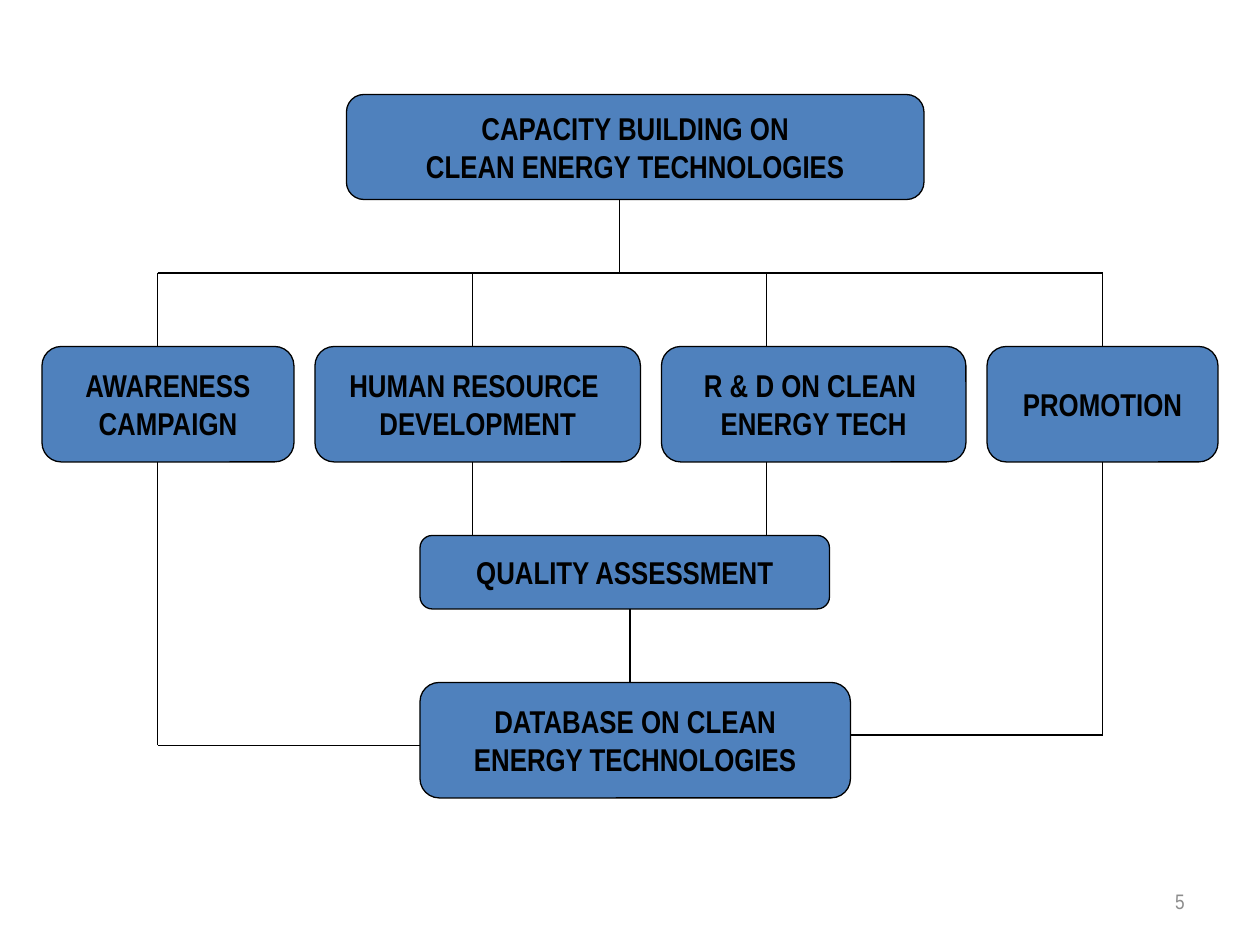
from pptx import Presentation
from pptx.dml.color import RGBColor
from pptx.enum.shapes import MSO_CONNECTOR, MSO_SHAPE
from pptx.enum.text import MSO_ANCHOR, PP_ALIGN
from pptx.oxml.ns import qn
from pptx.util import Pt
from lxml import etree

ROUNDED = MSO_SHAPE.ROUNDED_RECTANGLE
STRAIGHT = MSO_CONNECTOR.STRAIGHT
MIDDLE = MSO_ANCHOR.MIDDLE
CENTER, RIGHT = PP_ALIGN.CENTER, PP_ALIGN.RIGHT
TOP, BOTTOM = 0, 2
COLORS = {"box": "4F81BD", "ink": "000000", "number": "8C8C8C"}


class Chart:
    """Draws boxes, lines and text on one slide in a shared style."""

    font = "Arial Narrow"
    line_width = 0.75

    def __init__(self, slide):
        self.s = slide

    def color(self, name):
        return RGBColor.from_string(COLORS[name])

    def stroke(self, line):
        line.color.rgb = self.color("ink")
        line.width = Pt(self.line_width)

    def add_text(self, tf, lines, size, color, align, bold=False):
        tf.vertical_anchor = MIDDLE
        for i, text in enumerate(lines):
            p = tf.add_paragraph() if i else tf.paragraphs[0]
            p.alignment = align
            r = p.add_run()
            r.text = text
            r.font.name = self.font
            r.font.size = Pt(size)
            r.font.bold = bold
            r.font.color.rgb = self.color(color)

    def box(self, x, y, w, h, *lines):
        sp = self.s.shapes.add_shape(ROUNDED, Pt(x), Pt(y), Pt(w), Pt(h))
        sp.shadow.inherit = False
        sp.fill.solid()
        sp.fill.fore_color.rgb = self.color("box")
        self.stroke(sp.line)
        sp.text_frame.word_wrap = False
        self.add_text(sp.text_frame, lines, 18, "ink", CENTER, bold=True)
        return sp

    def line(self, x1, y1, x2, y2, begin=None, end=None):
        cx = self.s.shapes.add_connector(STRAIGHT, Pt(x1), Pt(y1), Pt(x2), Pt(y2))
        self.stroke(cx.line)
        etree.SubElement(cx._element.spPr, qn("a:effectLst"))
        if begin:
            cx.begin_connect(*begin)
        if end:
            cx.end_connect(*end)

    def label(self, x, y, w, h, text):
        sp = self.s.shapes.add_textbox(Pt(x), Pt(y), Pt(w), Pt(h))
        sp.text_frame.word_wrap = True
        self.add_text(sp.text_frame, [text], 12, "number", RIGHT)


def main():
    prs = Presentation()
    prs.slide_width, prs.slide_height = Pt(720), Pt(540)
    chart = Chart(prs.slides.add_slide(prs.slide_layouts[6]))

    chart.label(516, 500.5, 168, 28.75, "5")
    chart.box(240, 390, 246, 66, "DATABASE ON CLEAN", "ENERGY TECHNOLOGIES")
    chart.box(240, 306, 234, 42, "QUALITY ASSESSMENT")
    chart.box(198, 54, 330, 60, "CAPACITY BUILDING ON", "CLEAN ENERGY TECHNOLOGIES")

    row_top, row_height, gap = 198, 66, 12
    row_bottom = row_top + row_height
    branches = [
        (144, ["AWARENESS", "CAMPAIGN"]),
        (186, ["HUMAN RESOURCE ", "DEVELOPMENT"]),
        (174, ["R & D ON CLEAN ", "ENERGY TECH"]),
        (132, ["PROMOTION"]),
    ]
    x = 24
    for width, lines in branches:
        promotion = chart.box(x, row_top, width, row_height, *lines)
        x += width + gap

    bus_y = 156
    awareness_x, human_x, research_x, promotion_x = 90, 270, 438, 630
    chart.line(354, 114, 354, bus_y)
    chart.line(awareness_x, bus_y, promotion_x, bus_y)
    for x in (awareness_x, human_x, research_x):
        chart.line(x, bus_y, x, row_top)
    chart.line(promotion_x, bus_y, promotion_x, row_top, end=(promotion, TOP))

    for x in (human_x, research_x):
        chart.line(x, row_bottom, x, 306)
    chart.line(360, 348, 360, 390)

    left_y, right_y = 426, 420
    chart.line(awareness_x, row_bottom, awareness_x, left_y)
    chart.line(awareness_x, left_y, 240, left_y)
    chart.line(promotion_x, row_bottom, promotion_x, right_y, begin=(promotion, BOTTOM))
    chart.line(486, right_y, promotion_x, right_y)

    prs.save("out.pptx")


if __name__ == "__main__":
    main()
